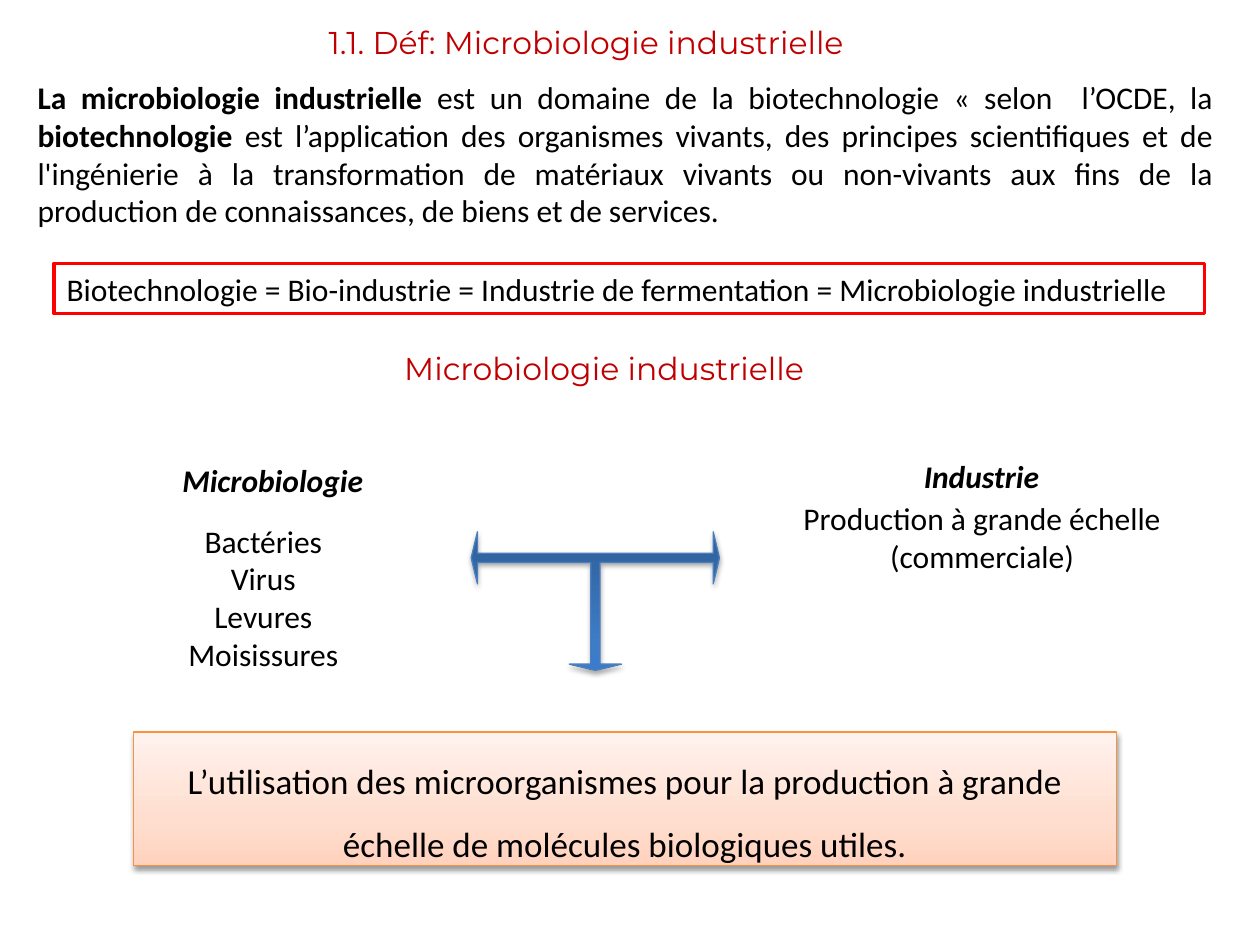
from dataclasses import dataclass
from typing import Optional

from lxml.etree import SubElement
from pptx import Presentation
from pptx.dml.color import RGBColor
from pptx.enum.shapes import MSO_SHAPE
from pptx.enum.text import MSO_ANCHOR, PP_ALIGN
from pptx.oxml.ns import qn
from pptx.util import Inches, Pt


@dataclass
class Box:
    left: float
    top: float
    width: float
    height: float


@dataclass
class Style:
    line: str
    weight: float
    stops: tuple = ()
    alpha: int = 0
    dist: float = 0


@dataclass
class Label:
    box: Box
    lines: list
    form: dict


def color(code: str) -> RGBColor:
    return RGBColor.from_string(code)


def write(shape, lines: list, size: float = 18, font: str = "Calibri",
          ink: str = "000000", bold: bool = False, italic: bool = False,
          align: PP_ALIGN = PP_ALIGN.LEFT, space: Optional[float] = None,
          wrap: bool = True) -> None:
    frame = shape.text_frame
    frame.word_wrap = wrap
    frame.vertical_anchor = MSO_ANCHOR.TOP
    for index, line in enumerate(lines):
        para = frame.add_paragraph() if index else frame.paragraphs[0]
        para.alignment = align
        para.line_spacing = space
        parts = [(line, bold)] if isinstance(line, str) else line
        for text, strong in parts:
            run = para.add_run()
            run.text = text
            run.font.size = Pt(size)
            run.font.name = font
            run.font.bold = strong
            run.font.italic = italic
            run.font.color.rgb = color(ink)


def place(box: Box) -> list:
    return [Inches(n) for n in (box.left, box.top, box.width, box.height)]


def tint(parent, code: str, alpha: int = 100) -> None:
    node = SubElement(parent, qn("a:srgbClr"), val=code)
    if alpha < 100:
        SubElement(node, qn("a:alpha"), val=str(alpha * 1000))


def blend(shape, stops: tuple) -> None:
    shape.fill.gradient()
    grad = shape.fill._xPr.find(qn("a:gradFill"))
    for child in list(grad):
        grad.remove(child)
    grad.set("rotWithShape", "1")
    group = SubElement(grad, qn("a:gsLst"))
    for pos, code in stops:
        tint(SubElement(group, qn("a:gs"), pos=str(pos * 1000)), code)
    SubElement(grad, qn("a:lin"), ang=str(270 * 60000), scaled="0")


def shade(shape, alpha: int, dist: float) -> None:
    effect = shape._element.spPr.find(qn("a:effectLst"))
    outer = SubElement(effect, qn("a:outerShdw"), blurRad=str(Pt(3.1)),
                       dist=str(Pt(dist)), dir=str(90 * 60000),
                       rotWithShape="0")
    tint(outer, "000000", alpha)


def draw(slide, kind: MSO_SHAPE, box: Box, style: Style):
    shape = slide.shapes.add_shape(kind, *place(box))
    shape.line.color.rgb = color(style.line)
    shape.line.width = Pt(style.weight)
    shape.shadow.inherit = False
    if style.stops:
        blend(shape, style.stops)
        shade(shape, style.alpha, style.dist)
    else:
        shape.fill.solid()
        shape.fill.fore_color.rgb = color("FFFFFF")
    return shape


TITLE = dict(font="Montserrat", ink="C00000", wrap=False)
MID = dict(align=PP_ALIGN.CENTER)
HEAD = dict(bold=True, italic=True, **MID)
INTRO = [
    ("La microbiologie industrielle ", True),
    ("est un domaine de la biotechnologie « selon  l’OCDE, la ", False),
    ("biotechnologie ", True),
    ("est l’application des organismes vivants, des principes scientifiques "
     "et de l'ingénierie à la transformation de matériaux vivants ou "
     "non-vivants aux fins de la production de connaissances, de biens et "
     "de services.", False),
]
LABELS = [
    Label(Box(2.51, 0.13, 4.93, 0.4),
          ["1.1. Déf: Microbiologie industrielle"], TITLE),
    Label(Box(0.2, 0.57, 9.53, 1.31), [INTRO], dict(align=PP_ALIGN.JUSTIFY)),
    Label(Box(3.11, 2.72, 3.71, 0.4), ["Microbiologie industrielle"], TITLE),
    Label(Box(1.14, 3.61, 2.05, 0.4), ["Microbiologie"], HEAD),
    Label(Box(6.57, 3.58, 2.44, 0.4), ["Industrie"], HEAD),
    Label(Box(1.38, 4.09, 1.42, 1.31),
          ["Bactéries", "Virus", "Levures", "Moisissures"], MID),
    Label(Box(6.26, 3.91, 3.07, 0.71),
          ["Production à grande échelle (commerciale)"], MID),
]
PEACH = Style("F69240", 0.75,
              ((0, "FFD2BD"), (35, "FFDED0"), (100, "FFF2ED")), 38, 1.6)
BLUE = Style("4B7EBC", 0.75,
             ((0, "2F5F99"), (80, "3D7CC7"), (100, "3A7CCB")), 35, 1.8)


def main() -> None:
    deck = Presentation()
    deck.slide_width, deck.slide_height = Inches(10), Inches(7.5)
    slide = deck.slides.add_slide(deck.slide_layouts[6])

    for label in LABELS:
        text = slide.shapes.add_textbox(*place(label.box))
        write(text, label.lines, **label.form)

    goal = draw(slide, MSO_SHAPE.RECTANGLE, Box(1.06, 5.81, 7.8, 1.06), PEACH)
    write(goal, ["L’utilisation des microorganismes pour la production à "
                 "grande échelle de molécules biologiques utiles."],
          size=20, space=1.5, **MID)

    terms = draw(slide, MSO_SHAPE.RECTANGLE, Box(0.43, 2.09, 9.13, 0.4),
                 Style("FF0000", 2))
    write(terms, ["Biotechnologie = Bio-industrie = Industrie de "
                  "fermentation = Microbiologie industrielle"])

    arrow = draw(slide, MSO_SHAPE.LEFT_RIGHT_UP_ARROW,
                 Box(3.74, 4.22, 1.97, 1.1), BLUE)
    arrow.rotation = 180
    for index, value in enumerate((0.067, 0.188, 0.045)):
        arrow.adjustments[index] = value

    deck.save("out.pptx")


if __name__ == "__main__":
    main()
